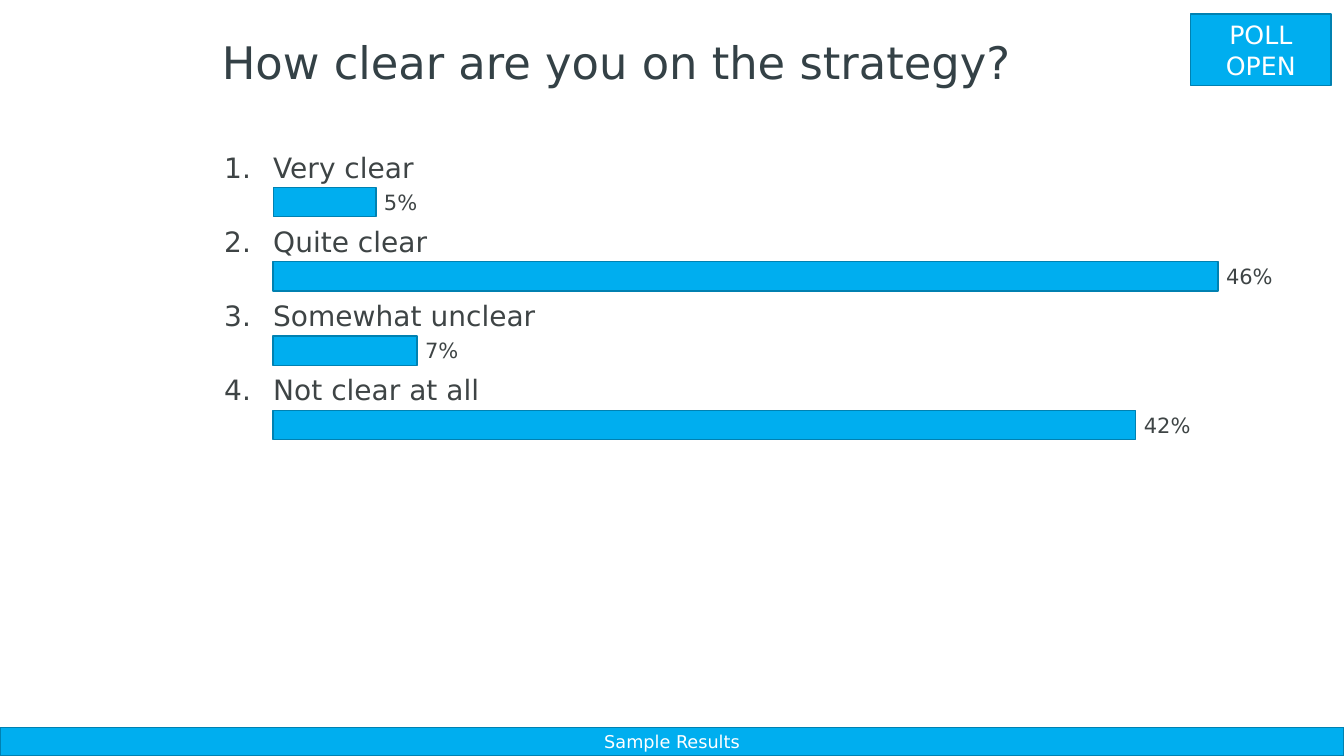
from dataclasses import dataclass

from pptx import Presentation
from pptx.dml.color import RGBColor
from pptx.enum.shapes import MSO_SHAPE
from pptx.enum.text import MSO_ANCHOR, MSO_AUTO_SIZE, PP_ALIGN
from pptx.util import Inches, Pt

RECT = MSO_SHAPE.RECTANGLE
TOP, MIDDLE = MSO_ANCHOR.TOP, MSO_ANCHOR.MIDDLE
LEFT, CENTER, RIGHT = PP_ALIGN.LEFT, PP_ALIGN.CENTER, PP_ALIGN.RIGHT
FIXED, GROW = MSO_AUTO_SIZE.NONE, MSO_AUTO_SIZE.SHAPE_TO_FIT_TEXT


@dataclass(frozen=True)
class Theme:
    font: str = "DejaVu Sans"
    bar: RGBColor = RGBColor(0x00, 0xAE, 0xEF)
    edge: RGBColor = RGBColor(0x00, 0x81, 0xB1)
    heading: RGBColor = RGBColor(0x34, 0x41, 0x46)
    body: RGBColor = RGBColor(0x3E, 0x44, 0x45)
    light: RGBColor = RGBColor(0xFF, 0xFF, 0xFF)
    title_size: float = 32
    answer_size: float = 20
    status_size: float = 18
    percent_size: float = 15
    footer_size: float = 12.6


class PollSlide:
    def __init__(self, slide, theme):
        self.slide, self.theme = slide, theme

    def set_text(self, sp, text, size, color, align=LEFT, insets=(0.1, 0.05, 0.1, 0.05), **frame):
        """Put one paragraph in a shape; insets are left, top, right, bottom."""
        tf = sp.text_frame
        sides = ("margin_left", "margin_top", "margin_right", "margin_bottom")
        values = dict(zip(sides, map(Inches, insets)))
        values.update({"word_wrap": True, "auto_size": FIXED, "vertical_anchor": TOP}, **frame)
        for name, value in values.items():
            setattr(tf, name, value)
        p = tf.paragraphs[0]
        p.alignment = align
        r = p.add_run()
        r.text = text
        for name, value in {"name": self.theme.font, "size": Pt(size)}.items():
            setattr(r.font, name, value)
        r.font.color.rgb = color

    def title(self, text, left, top, width, height):
        sp = self.slide.shapes.title
        sp.left, sp.top, sp.width, sp.height = map(Inches, (left, top, width, height))
        self.set_text(sp, text, self.theme.title_size, self.theme.heading)

    def box(self, left, top, width, height, parent=None):
        shapes = (parent or self.slide).shapes
        sp = shapes.add_shape(RECT, *map(Inches, (left, top, width, height)))
        sp.shadow.inherit = False
        sp.fill.solid()
        sp.fill.fore_color.rgb = self.theme.bar
        sp.line.color.rgb = self.theme.edge
        sp.line.width = Pt(1)
        return sp

    def banner(self, text, size, at, **frame):
        self.set_text(self.box(*at), text, size, self.theme.light, CENTER,
                      vertical_anchor=MIDDLE, **frame)

    def label(self, parent, text, size, at, **style):
        sp = parent.shapes.add_textbox(*map(Inches, at))
        self.set_text(sp, text, size, self.theme.body, auto_size=GROW, **style)

    def result(self, number, answer, percent, top):
        """One answer: its number, wording, bar and share of the votes."""
        t, g = self.theme, self.slide.shapes.add_group_shape()
        bar_top, bar_width = top + 0.43, percent * BAR_SCALE
        share = f"{percent}%"
        self.label(g, f"{number}.", t.answer_size, (MARGIN, top, BAR_LEFT - MARGIN, 0.39),
                   align=RIGHT, insets=(0.1, 0.06, 0.22, 0), word_wrap=False)
        self.label(g, answer, t.answer_size, (BAR_LEFT, top, 10.08, 0.42),
                   insets=(0, 0.06, 0, 0.03))
        self.label(g, share, t.percent_size,
                   (BAR_LEFT + bar_width, bar_top + 0.02, 0.16 + 0.14 * len(share), 0.25),
                   insets=(0.08, 0, 0, 0), word_wrap=False)
        self.box(BAR_LEFT, bar_top, bar_width, 0.29, g)


WIDTH, HEIGHT = 13.33, 7.5
MARGIN, BAR_LEFT = 2.1, 2.71
FIRST_ROW, ROW_STEP = 1.43, 2.21 / 3
RESULTS = [("Very clear", 5), ("Quite clear", 46), ("Somewhat unclear", 7), ("Not clear at all", 42)]
BAR_SCALE = 9.37 / max(percent for _, percent in RESULTS)


def main():
    prs = Presentation()
    prs.slide_width, prs.slide_height = Inches(WIDTH), Inches(HEIGHT)
    theme = Theme()
    s = PollSlide(prs.slides.add_slide(prs.slide_layouts[5]), theme)

    # Title, footer and poll status
    s.title("How clear are you on the strategy?", MARGIN, 0.29, 9.52, 1.06)
    s.banner("Sample Results", theme.footer_size, (0, 7.22, WIDTH, 0.28), word_wrap=False)
    s.banner("POLL OPEN", theme.status_size, (11.81, 0.14, 1.39, 0.71), auto_size=GROW)

    # Answers with result bars
    for i, (answer, percent) in enumerate(RESULTS):
        s.result(i + 1, answer, percent, FIRST_ROW + i * ROW_STEP)

    prs.save("out.pptx")


if __name__ == "__main__":
    main()
